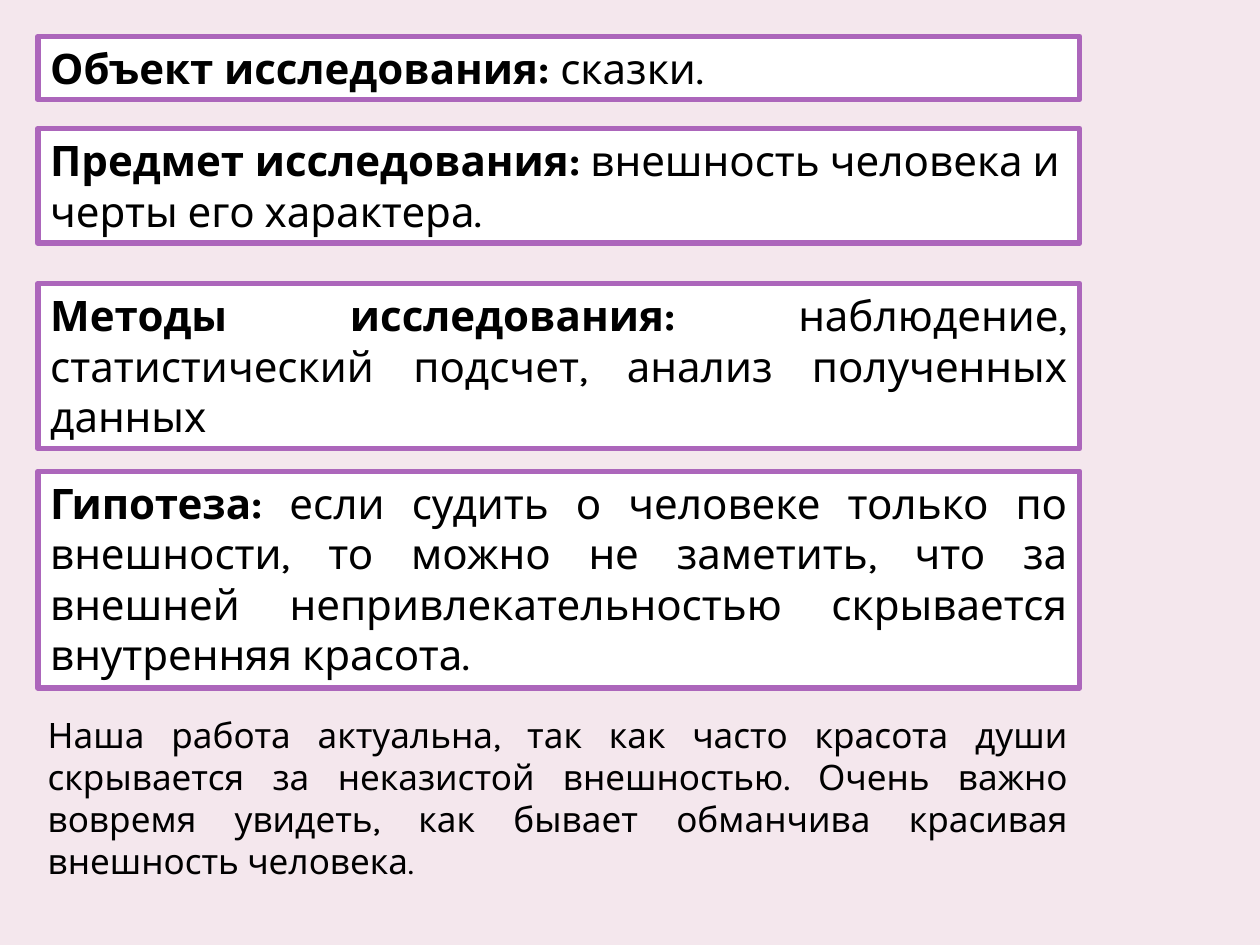
from pptx import Presentation
from pptx.dml.color import RGBColor
from pptx.enum.shapes import MSO_SHAPE
from pptx.enum.text import MSO_ANCHOR, MSO_AUTO_SIZE, PP_ALIGN
from pptx.util import Inches, Pt

RECT = MSO_SHAPE.RECTANGLE
TOP = MSO_ANCHOR.TOP
GROW = MSO_AUTO_SIZE.SHAPE_TO_FIT_TEXT
LEFT, JUSTIFY = PP_ALIGN.LEFT, PP_ALIGN.JUSTIFY

PINK = RGBColor(0xF4, 0xE7, 0xED)
PURPLE = RGBColor(0xAC, 0x66, 0xBB)
WHITE = RGBColor(0xFF, 0xFF, 0xFF)
BLACK = RGBColor(0x00, 0x00, 0x00)
FONT = "Karla"


def write(shape, align, runs):
    frame = shape.text_frame
    frame.word_wrap = True
    frame.auto_size = GROW
    frame.vertical_anchor = TOP
    para = frame.paragraphs[0]
    para.alignment = align
    for text, size, bold in runs:
        run = para.add_run()
        run.text = text
        run.font.name = FONT
        run.font.size = Pt(size)
        run.font.bold = bold
        run.font.color.rgb = BLACK


prs = Presentation()
prs.slide_width, prs.slide_height = Inches(10), Inches(7.5)
slide = prs.slides.add_slide(prs.slide_layouts[6])
slide.background.fill.solid()
slide.background.fill.fore_color.rgb = PINK

# Framed boxes: top, height, alignment, bold label, text
boxes = [
    (0.29, 0.5, JUSTIFY, "Объект исследования: ", "сказки."),
    (1.02, 0.91, LEFT, "Предмет исследования:",
     " внешность человека и черты его характера."),
    (2.25, 1.31, JUSTIFY, "Методы исследования: ",
     "наблюдение, статистический подсчет, анализ полученных данных"),
    (3.74, 1.72, JUSTIFY, "Гипотеза:",
     " если судить о человеке только по внешности, то можно не заметить, "
     "что за внешней непривлекательностью скрывается внутренняя красота."),
]
for top, height, align, label, text in boxes:
    box = slide.shapes.add_shape(
        RECT, Inches(0.3), Inches(top), Inches(8.27), Inches(height))
    box.shadow.inherit = False
    box.fill.solid()
    box.fill.fore_color.rgb = WHITE
    box.line.color.rgb = PURPLE
    box.line.width = Pt(3.15)
    write(box, align, [(label, 24, True), (text, 24, False)])

# Closing note on relevance
note = slide.shapes.add_textbox(
    Inches(0.28), Inches(5.61), Inches(8.29), Inches(1.45))
write(note, JUSTIFY, [
    ("Наша работа актуальна, так как часто красота души скрывается за "
     "неказистой внешностью. Очень важно вовремя увидеть, как бывает "
     "обманчива красивая внешность человека", 20, False),
    (".", 18, False),
])

prs.save("out.pptx")
